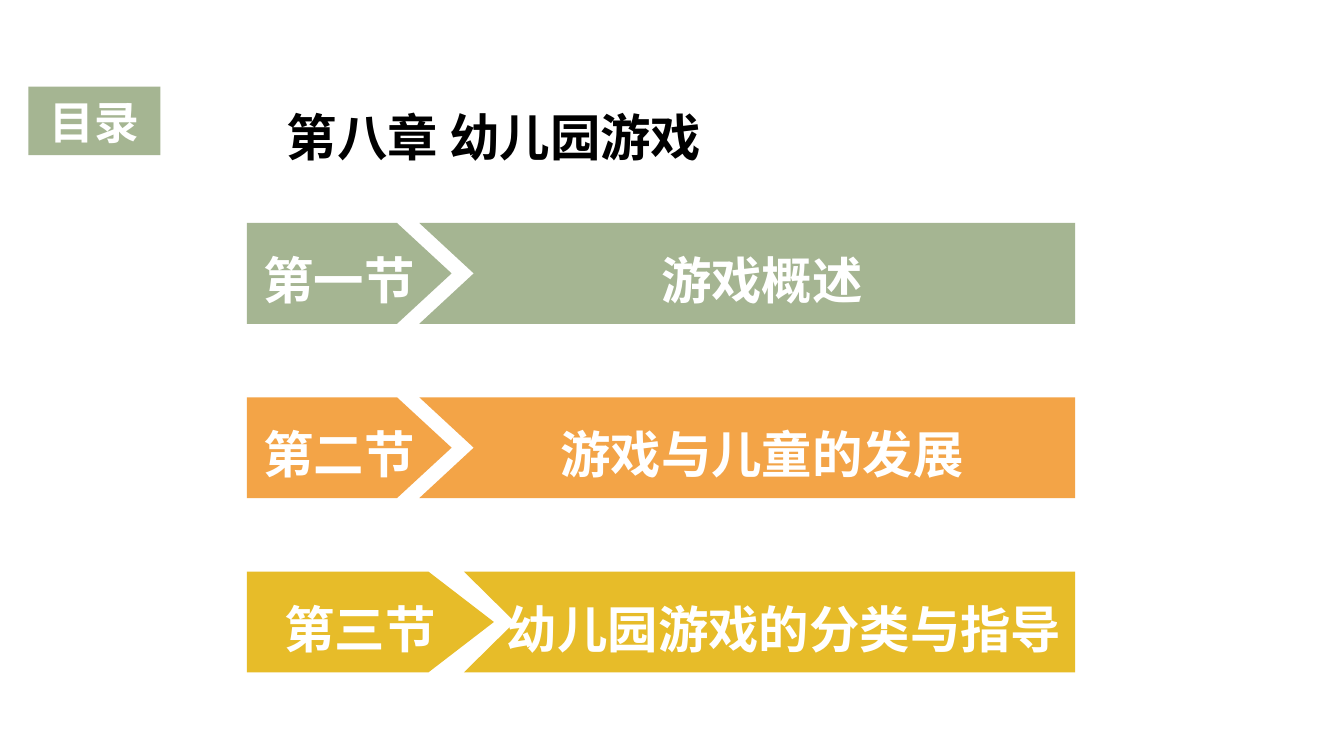
from pptx import Presentation
from pptx.dml.color import RGBColor
from pptx.enum.shapes import MSO_SHAPE
from pptx.enum.text import MSO_ANCHOR as ANCHOR, MSO_AUTO_SIZE as AUTO, PP_ALIGN as ALIGN
from pptx.util import Pt

GREEN = RGBColor(0xA5, 0xB5, 0x92)
ORANGE = RGBColor(0xF3, 0xA4, 0x47)
YELLOW = RGBColor(0xE7, 0xBC, 0x29)
WHITE = RGBColor(0xFF, 0xFF, 0xFF)
BLACK = RGBColor(0, 0, 0)

LABEL = "目录"
TITLE = "第八章 幼儿园游戏"
NARROW = (283.6, 322.6, 299.5, 338.4)
WIDE = (306, 352.8, 331.4, 367.9)
SECTIONS = [
    ("第一节", "游戏概述", GREEN, NARROW),
    ("第二节", "游戏与儿童的发展", ORANGE, NARROW),
    ("第三节", "幼儿园游戏的分类与指导", YELLOW, WIDE),
]

LEFT, RIGHT = 176.4, 768
TOP, HEIGHT, PITCH = 159.3, 72, 124.5
TAG_INSETS = (7.2, 3.6, 22, 3.6)
BAR_INSETS = (28, 3.6, 7.2, 3.6)


def write(sp, text, insets, size=36, color=WHITE, spacing=1.2, anchor=ANCHOR.MIDDLE):
    tf = sp.text_frame
    tf.text = text
    tf.word_wrap = True
    tf.auto_size = AUTO.NONE
    tf.vertical_anchor = anchor
    tf.margin_left, tf.margin_top, tf.margin_right, tf.margin_bottom = map(Pt, insets)
    p = tf.paragraphs[0]
    p.alignment = ALIGN.CENTER
    p.line_spacing = spacing
    font = p.runs[0].font
    font.name, font.size, font.bold = "Arial", Pt(size), True
    font.color.rgb = color


def paint(sp, color):
    sp.shadow.inherit = False
    sp.fill.solid()
    sp.fill.fore_color.rgb = color
    sp.line.fill.background()


def add_outline(shapes, points, color, text, insets):
    corners = [(Pt(x), Pt(y)) for x, y in points]
    builder = shapes.build_freeform(*corners[0])
    builder.add_line_segments(corners[1:], close=True)
    sp = builder.convert_to_shape()
    paint(sp, color)
    write(sp, text, insets)


prs = Presentation()
prs.slide_width, prs.slide_height = Pt(960), Pt(540)
s = prs.slides.add_slide(prs.slide_layouts[5])

title = s.shapes.title
title.left, title.top, title.width, title.height = Pt(115.2), Pt(63.4), Pt(475.2), Pt(46)
write(title, TITLE, (7.2, 3.6, 7.2, 3.6), color=BLACK, anchor=ANCHOR.TOP)

label = s.shapes.add_shape(MSO_SHAPE.RECTANGLE, Pt(20.2), Pt(61.9), Pt(94.3), Pt(49))
paint(label, GREEN)
write(label, LABEL, (7.2, 0, 7.2, 3.6), size=32, spacing=1.1)

for i, (tag, name, color, (shoulder, tip, start, notch)) in enumerate(SECTIONS):
    top = TOP + i * PITCH
    middle, bottom = top + HEIGHT / 2, top + HEIGHT
    bar = [(start, top), (RIGHT, top), (RIGHT, bottom), (start, bottom), (notch, middle)]
    arrow = [(LEFT, top), (shoulder, top), (tip, middle), (shoulder, bottom), (LEFT, bottom)]
    row = s.shapes.add_group_shape()
    add_outline(row.shapes, bar, color, name, BAR_INSETS)
    add_outline(row.shapes, arrow, color, tag, TAG_INSETS)

prs.save("out.pptx")
